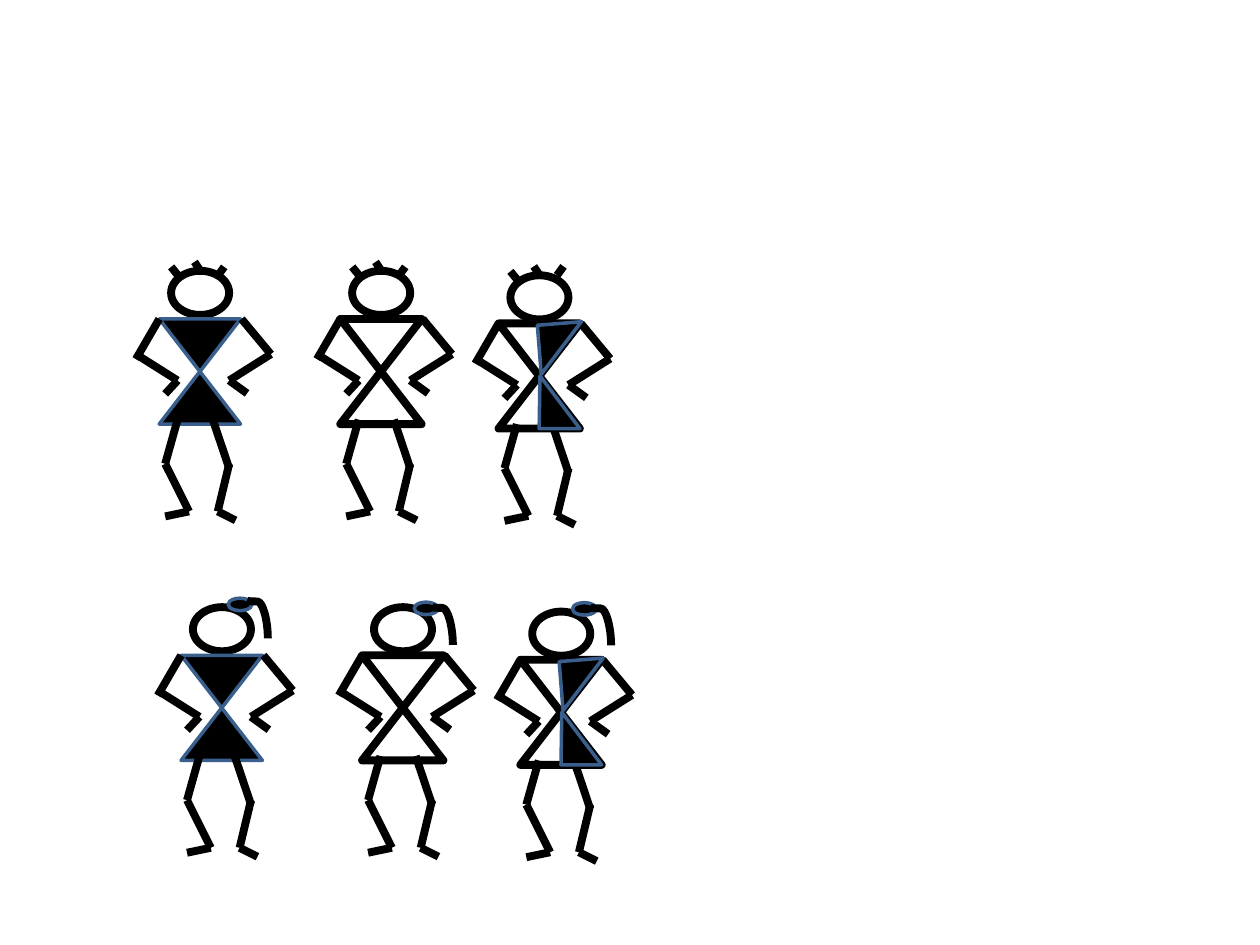
from lxml.etree import SubElement
from pptx import Presentation
from pptx.dml.color import RGBColor
from pptx.enum.shapes import MSO_CONNECTOR, MSO_SHAPE
from pptx.oxml.ns import qn
from pptx.util import Cm, Pt

BLACK = RGBColor(0, 0, 0)
WHITE = RGBColor(255, 255, 255)
BLUE = RGBColor(0x3A, 0x5F, 0x8C)
THICK, THIN = Pt(4.5), Pt(2)

# Lengths in cm, from the left elbow and the top of the head
LIMBS = [
    ((0.47, 0.97), (0, 1.78)),        # left arm
    ((0.84, 2.21), (0, 1.68)),
    ((0.84, 2.21), (0.59, 2.48)),
    ((2.13, 0.97), (2.72, 1.68)),     # right arm
    ((1.88, 2.21), (2.72, 1.68)),
    ((1.88, 2.21), (2.24, 2.47)),
    ((0.84, 3), (0.59, 3.89)),        # left leg
    ((0.59, 3.89), (1.07, 4.85)),
    ((1.07, 4.85), (0.59, 4.95)),
    ((1.55, 3), (1.88, 3.98)),        # right leg
    ((1.88, 3.89), (1.65, 4.85)),
    ((2.01, 5.03), (1.65, 4.85)),
]
TUFTS = [((0.88, 0.13), (0.71, -0.08)), ((1.3, 0), (1.18, -0.18))]

# Shift of each figure in a row, and its dress
ROW = [(0, 0, "black"), (3.65, 0, "white"), (6.84, 0.09, "half")]
# Bun and tail of each girl
BUNS = [((1.42, -0.18), (1.8, -0.13)),
        ((1.52, -0.1), (1.88, 0)),
        ((1.52, -0.18), (1.88, -0.08))]


def add_form(group, kind, x, y, wide, high, dark=False, turn=0, peak=None):
    form = group.shapes.add_shape(kind, Cm(x), Cm(y), Cm(wide), Cm(high))
    form.shadow.inherit = False
    form.fill.solid()
    form.fill.fore_color.rgb = BLACK if dark else WHITE
    form.line.color.rgb = BLUE if dark else BLACK
    form.line.width = THIN if dark else THICK
    form.rotation = turn
    if peak is not None:
        form.adjustments[0] = peak


def add_line(group, start, end, kind=MSO_CONNECTOR.STRAIGHT):
    line = group.shapes.add_connector(kind, *map(Cm, start + end))
    line.line.color.rgb = BLACK
    line.line.width = THICK
    SubElement(line.element.spPr, qn("a:effectLst"))
    return line


def add_body(group, x, y, dress):
    add_form(group, MSO_SHAPE.OVAL, x + 0.71, y, 1.17, 0.89)
    # Skirt and top
    for top, turn in ((2.03, 0), (0.97, 180)):
        add_form(group, MSO_SHAPE.ISOSCELES_TRIANGLE, x + 0.47, y + top,
                 1.64, 1.06, dress == "black", turn)
    for (ax, ay), (bx, by) in LIMBS:
        add_line(group, (x + ax, y + ay), (x + bx, y + by))
    # Dark right side
    if dress == "half":
        for top, wide, high, turn, peak in ((2.03, 0.82, 1.06, 0, 0.02),
                                            (0.97, 0.89, 0.99, 175.4, 1)):
            add_form(group, MSO_SHAPE.ISOSCELES_TRIANGLE, x + 1.29, y + top,
                     wide, high, True, turn, peak)


def add_boy(slide, x, y, dress):
    group = slide.shapes.add_group_shape()
    add_body(group, x, y, dress)
    lift = 0.1 if dress == "half" else 0
    last = ((1.65, 0.1 - lift), (1.78, -0.08 - lift))
    for (ax, ay), (bx, by) in TUFTS + [last]:
        add_line(group, (x + ax, y + ay), (x + bx, y + by))


def add_girl(slide, x, y, dress, bun, tail):
    group = slide.shapes.add_group_shape()
    add_body(group, x, y, dress)
    add_form(group, MSO_SHAPE.OVAL, x + bun[0], y + bun[1], 0.48, 0.25, True)
    # Pony tail: a flat curve turned upright about its centre
    wide, high = 0.42, 0.76
    mid, level = x + tail[0] + wide / 2, y + tail[1] + high / 2
    curve = add_line(group, (mid + high / 2, level - wide / 2),
                     (mid - high / 2, level + wide / 2), MSO_CONNECTOR.CURVE)
    shape = curve.element.spPr
    shape.find(qn("a:xfrm")).set("rot", str(270 * 60000))
    bend = shape.find(qn("a:prstGeom")).find(qn("a:avLst"))
    SubElement(bend, qn("a:gd"), name="adj1", fmla="val 2200")


def main():
    deck = Presentation()
    deck.slide_width, deck.slide_height = Cm(25.4), Cm(19.05)
    slide = deck.slides.add_slide(deck.slide_layouts[6])
    for (x, y, dress), (bun, tail) in zip(ROW, BUNS):
        add_boy(slide, 2.74 + x, 5.46 + y, dress)
        add_girl(slide, 3.18 + x, 12.24 + y, dress, bun, tail)
    deck.save("out.pptx")


if __name__ == "__main__":
    main()
